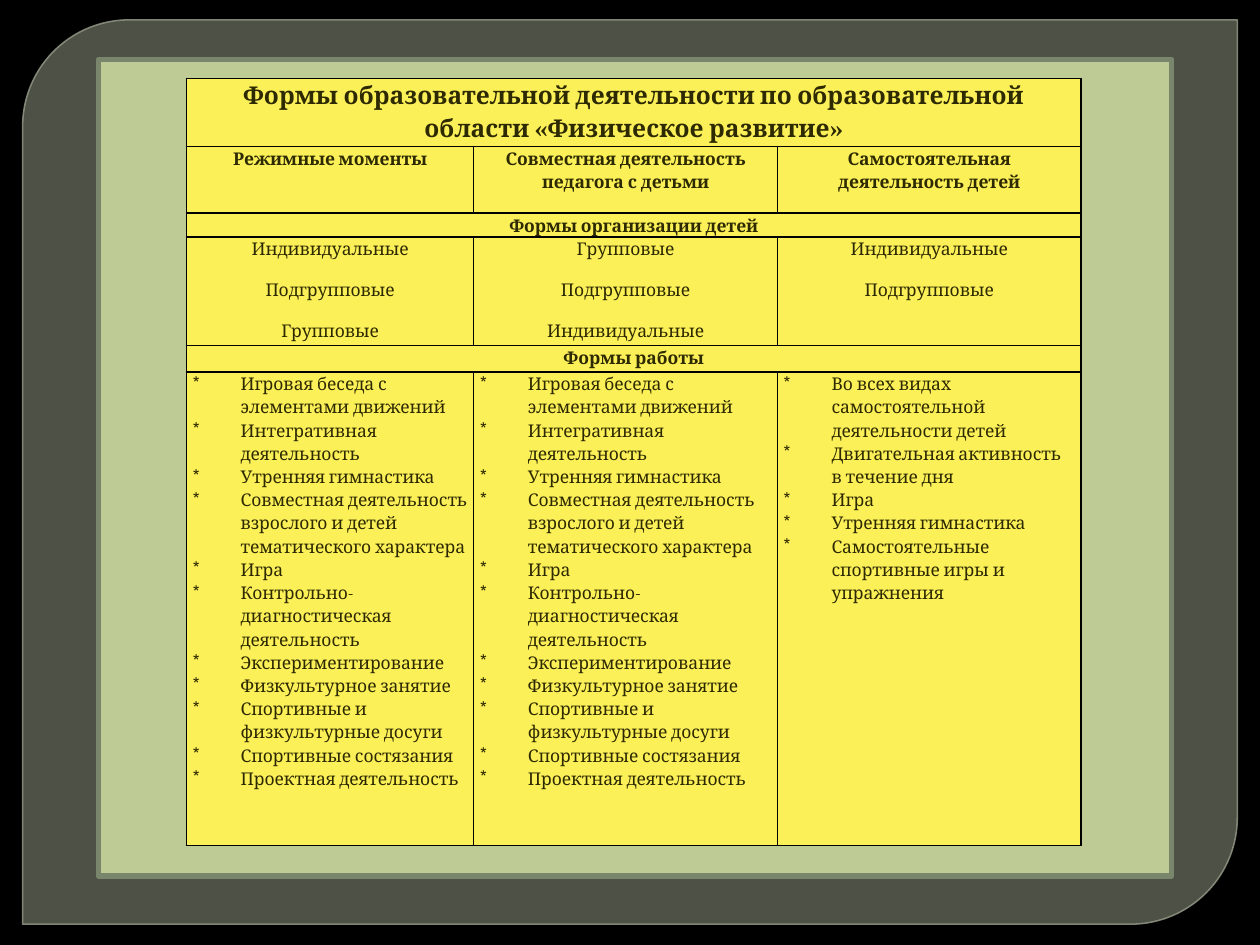
from dataclasses import dataclass
from typing import NamedTuple

from lxml.etree import SubElement
from pptx import Presentation
from pptx.dml.color import RGBColor as RGB
from pptx.enum.shapes import MSO_SHAPE as Shape
from pptx.enum.text import PP_ALIGN as Align
from pptx.oxml.ns import qn
from pptx.util import Emu, Inches, Pt


@dataclass(frozen=True)
class Theme:
    font: str = "Cambria"
    background: str = "000000"
    ink: str = "2D2901"
    cell: str = "FCF059"
    border: str = "000000"
    title: int = 14
    body: int = 10
    leading: float = 1.15
    gap: int = 10
    indent: float = 0.38
    tabs: tuple[float, ...] = (0.12, 0.5)


class Panel(NamedTuple):
    kind: Shape
    x: float
    y: float
    w: float
    h: float
    fill: str
    fill_alpha: int
    line: str
    line_alpha: int
    weight: float
    rounding: tuple[float, ...] = ()


class Band(NamedTuple):
    height: float
    cells: tuple[tuple[str, ...], ...]
    size: int
    bold: bool = False
    bullets: bool = False


THEME = Theme()
WIDTH, HEIGHT = Inches(10), Inches(7.5)
COLUMNS = (2.28, 2.41, 2.41)
TABLE_LEFT, TABLE_TOP = 0.148, 0.083

PANELS = (
    Panel(Shape.ROUND_2_DIAG_RECTANGLE, 0.018, 0.021, 0.964, 0.957,
          "787D6B", 65, "8F9483", 88, 0.87, (0.118, 0)),
    Panel(Shape.RECTANGLE, 0.078, 0.063, 0.852, 0.864,
          "BECB95", 100, "7A866C", 100, 3),
)

GUIDED = (
    "Игровая беседа с элементами движений",
    "Интегративная деятельность",
    "Утренняя гимнастика",
    "Совместная деятельность взрослого и детей тематического характера",
    "Игра",
    "Контрольно-диагностическая деятельность",
    "Экспериментирование",
    "Физкультурное занятие",
    "Спортивные и физкультурные досуги",
    "Спортивные состязания",
    "Проектная деятельность",
)
INDEPENDENT = (
    "Во всех видах самостоятельной деятельности детей",
    "Двигательная активность в течение дня",
    "Игра",
    "Утренняя гимнастика",
    "Самостоятельные спортивные игры и упражнения",
)
SINGLE, SUBGROUP, GROUP = "Индивидуальные", "Подгрупповые", "Групповые"

BANDS = (
    Band(0.54, (("Формы образовательной деятельности по образовательной "
                 "области «Физическое развитие»",),), THEME.title, bold=True),
    Band(0.53, (("Режимные моменты",),
                ("Совместная деятельность педагога с детьми",),
                ("Самостоятельная деятельность детей",)), THEME.body, bold=True),
    Band(0.19, (("Формы организации детей",),), THEME.body, bold=True),
    Band(0.86, ((SINGLE, SUBGROUP, GROUP), (GROUP, SUBGROUP, SINGLE),
                (SINGLE, SUBGROUP)), THEME.body),
    Band(0.21, (("Формы работы",),), THEME.body, bold=True),
    Band(3.76, (GUIDED, GUIDED, INDEPENDENT), THEME.body, bullets=True),
)


def apply(target, values: dict) -> None:
    for name, value in values.items():
        setattr(target, name, value)


def set_alpha(fill, color: str, percent: int) -> None:
    fill.solid()
    fill.fore_color.rgb = RGB.from_string(color)
    if percent < 100:
        node = fill._xPr.find(qn("a:solidFill"))[0]
        SubElement(node, qn("a:alpha"), val=str(percent * 1000))


def add_panel(s, panel: Panel) -> None:
    sp = s.shapes.add_shape(panel.kind, Emu(int(WIDTH * panel.x)), Emu(int(HEIGHT * panel.y)),
                            Emu(int(WIDTH * panel.w)), Emu(int(HEIGHT * panel.h)))
    sp.shadow.inherit = False
    for i, value in enumerate(panel.rounding):
        sp.adjustments[i] = value
    set_alpha(sp.fill, panel.fill, panel.fill_alpha)
    sp.line.width = Pt(panel.weight)
    set_alpha(sp.line.fill, panel.line, panel.line_alpha)


def add_bullet(p) -> None:
    pPr = p._p.get_or_add_pPr()
    pPr.set("marL", str(Inches(THEME.indent)))
    pPr.set("indent", str(-Inches(THEME.indent)))
    SubElement(pPr, qn("a:buChar"), char="*")
    tabs = SubElement(pPr, qn("a:tabLst"))
    for pos in THEME.tabs:
        SubElement(tabs, qn("a:tab"), pos=str(Inches(pos)), algn="l")


def style_cell(cell) -> None:
    tcPr = cell._tc.get_or_add_tcPr()
    for side in ("lnL", "lnR", "lnT", "lnB"):
        ln = SubElement(tcPr, qn(f"a:{side}"), w=str(Pt(1)))
        SubElement(SubElement(ln, qn("a:solidFill")), qn("a:srgbClr"), val=THEME.border)
    cell.fill.solid()
    cell.fill.fore_color.rgb = RGB.from_string(THEME.cell)
    apply(cell, dict(margin_left=Inches(0.05), margin_right=Inches(0.05),
                     margin_top=0, margin_bottom=0))


def write_cell(cell, lines: tuple[str, ...], band: Band) -> None:
    tf = cell.text_frame
    for i, line in enumerate(lines):
        p = tf.add_paragraph() if i else tf.paragraphs[0]
        if band.bullets:
            add_bullet(p)
        apply(p, dict(alignment=Align.LEFT if band.bullets else Align.CENTER,
                      line_spacing=THEME.leading,
                      space_after=Pt(0 if band.bullets else THEME.gap)))
        r = p.add_run()
        r.text = line
        apply(r.font, dict(name=THEME.font, size=Pt(band.size), bold=band.bold))
        r.font.color.rgb = RGB.from_string(THEME.ink)


def add_grid(s, bands: tuple[Band, ...]) -> None:
    frame = s.shapes.add_table(len(bands), len(COLUMNS), Emu(int(WIDTH * TABLE_LEFT)),
                               Emu(int(HEIGHT * TABLE_TOP)), Inches(sum(COLUMNS)),
                               Inches(sum(band.height for band in bands)))
    table = frame.table
    apply(table, dict(first_row=False, horz_banding=False))
    for column, width in zip(table.columns, COLUMNS):
        column.width = Inches(width)
    for i, band in enumerate(bands):
        row = table.rows[i]
        row.height = Inches(band.height)
        for cell in row.cells:
            style_cell(cell)
        if len(band.cells) == 1:
            table.cell(i, 0).merge(table.cell(i, len(COLUMNS) - 1))
        for j, lines in enumerate(band.cells):
            write_cell(table.cell(i, j), lines, band)


def main() -> None:
    prs = Presentation()
    apply(prs, dict(slide_width=WIDTH, slide_height=HEIGHT))
    s = prs.slides.add_slide(prs.slide_layouts[6])
    s.background.fill.solid()
    s.background.fill.fore_color.rgb = RGB.from_string(THEME.background)
    for panel in PANELS:
        add_panel(s, panel)
    add_grid(s, BANDS)
    prs.save("out.pptx")


if __name__ == "__main__":
    main()
